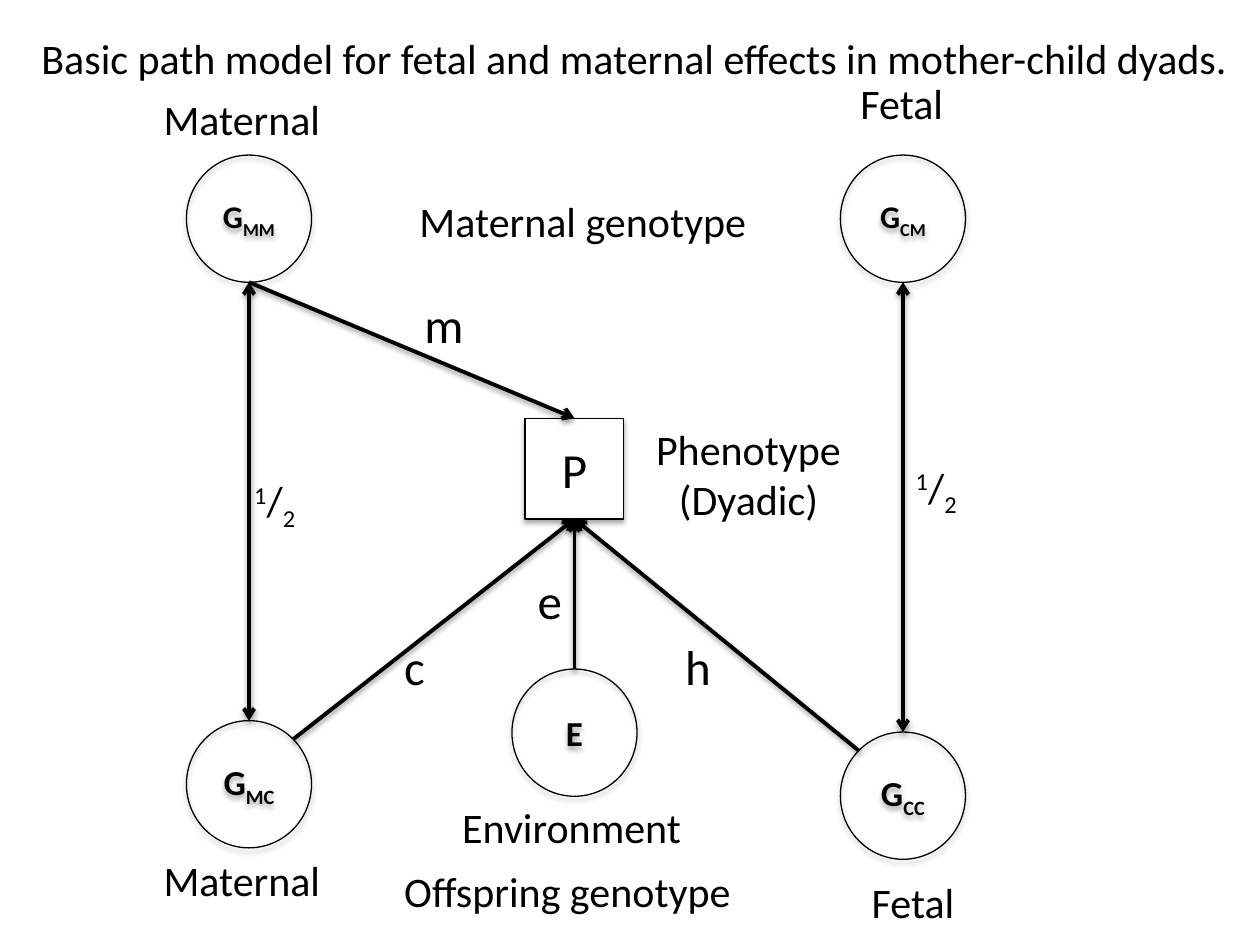
from lxml.etree import SubElement
from pptx import Presentation
from pptx.dml.color import RGBColor
from pptx.enum.shapes import MSO_CONNECTOR, MSO_SHAPE
from pptx.enum.text import MSO_ANCHOR, MSO_AUTO_SIZE, PP_ALIGN
from pptx.oxml.ns import qn
from pptx.util import Pt

BLACK = RGBColor(0, 0, 0)
WHITE = RGBColor(255, 255, 255)
SUB, SUP = -25000, 30000


def write(tf, *lines, size=24, bold=False, align=PP_ALIGN.LEFT):
    """Write one paragraph per line; a line is a list of (text, baseline) runs."""
    for i, line in enumerate(lines):
        p = tf.paragraphs[0] if i == 0 else tf.add_paragraph()
        p.alignment = align
        for text, baseline in line:
            r = p.add_run()
            r.text = text
            r.font.name = "Calibri"
            r.font.size = Pt(size)
            r.font.bold = bold
            r.font.color.rgb = BLACK
            if baseline:
                r._r.get_or_add_rPr().set("baseline", str(baseline))


prs = Presentation()
prs.slide_width, prs.slide_height = Pt(720), Pt(540)
slide = prs.slides.add_slide(prs.slide_layouts[6])
shapes = slide.shapes

# Column centres, and the top edges of the nodes
LEFT, MID, RIGHT = 142.3, 328.3, 516
MM_TOP, CM_TOP, MC_TOP, CC_TOP, E_TOP, P_TOP = 88.6, 88.6, 411.8, 418.3, 382.3, 239
NODE_W, NODE_H = 71.5, 72.7
P_W, P_H = 56.4, 57.6
P_BOTTOM = P_TOP + P_H
SIDE_X, SIDE_Y = 0.354 * NODE_W, 0.146 * NODE_H  # 45 degree point on a circle

# Nodes and connectors keep the theme's soft shadow
nodes = [
    (MSO_SHAPE.OVAL, LEFT, MM_TOP, "G", "MM", 18),
    (MSO_SHAPE.RECTANGLE, MID, P_TOP, "P", "", 28),
    (MSO_SHAPE.OVAL, RIGHT, CM_TOP, "G", "CM", 18),
    (MSO_SHAPE.OVAL, LEFT, MC_TOP, "G", "MC", 20),
    (MSO_SHAPE.OVAL, RIGHT, CC_TOP, "G", "CC", 20),
    (MSO_SHAPE.OVAL, MID, E_TOP, "E", "", 20),
]
for kind, cx, top, name, sub, size in nodes:
    is_circle = kind == MSO_SHAPE.OVAL
    w, h = (NODE_W, NODE_H) if is_circle else (P_W, P_H)
    sp = shapes.add_shape(kind, Pt(cx - w / 2), Pt(top), Pt(w), Pt(h))
    if is_circle:
        sp.fill.background()
    else:
        sp.fill.solid()
        sp.fill.fore_color.rgb = WHITE
    sp.line.color.rgb = BLACK
    sp.line.width = Pt(0.75)
    sp.text_frame.vertical_anchor = MSO_ANCHOR.MIDDLE
    runs = [(name, 0), (sub, SUB)] if sub else [(name, 0)]
    write(sp.text_frame, runs, size=size, bold=is_circle, align=PP_ALIGN.CENTER)

# Paths: start, end, arrowhead at both ends
paths = [
    (LEFT, MM_TOP + NODE_H, LEFT, MC_TOP, True),
    (RIGHT, CM_TOP + NODE_H, RIGHT, CC_TOP, True),
    (LEFT, MM_TOP + NODE_H, MID, P_TOP, False),
    (LEFT + SIDE_X, MC_TOP + SIDE_Y, MID, P_BOTTOM, False),
    (RIGHT - SIDE_X, CC_TOP + SIDE_Y, MID, P_BOTTOM, False),
    (MID, E_TOP, MID, P_BOTTOM, False),
]
for x1, y1, x2, y2, both in paths:
    line = shapes.add_connector(MSO_CONNECTOR.STRAIGHT, Pt(x1), Pt(y1), Pt(x2), Pt(y2))
    line.line.color.rgb = BLACK
    line.line.width = Pt(2.25)
    ln = line.line._get_or_add_ln()
    for end in ("a:headEnd", "a:tailEnd") if both else ("a:tailEnd",):
        SubElement(ln, qn(end)).set("type", "arrow")

# Labels: left, top, width, height, lines, size, wrap, alignment
HALF = [("1", SUP), ("/", 0), ("2", SUB)]
L, C = PP_ALIGN.LEFT, PP_ALIGN.CENTER
labels = [
    (138.2, 267.8, 44, 36, [HALF], 24, True, L),
    (516.2, 259.9, 44, 36, [HALF], 24, True, L),
    (235.4, 164.9, 26, 41, ["m"], 28, True, L),
    (223.9, 360, 52, 41, ["c"], 28, True, L),
    (384.5, 360, 69, 41, ["h"], 28, True, L),
    (300.2, 322.6, 52, 41, ["e"], 28, True, L),
    (232.6, 108, 204, 36, ["Maternal genotype"], 24, False, L),
    (86.4, 49.7, 105, 36, ["Maternal"], 24, False, L),
    (484.6, 41, 63, 36, ["Fetal"], 24, False, L),
    (367.2, 238.3, 121, 65.5, ["Phenotype", "(Dyadic)"], 24, False, C),
    (223.9, 491, 204, 36, ["Offspring genotype"], 24, False, L),
    (86.4, 484.6, 105, 36, ["Maternal"], 24, False, L),
    (491, 497.5, 63, 36, ["Fetal"], 24, False, L),
    (257, 454.3, 142, 36, ["Environment"], 24, False, L),
    (16.6, 15.1, 703.4, 36,
     ["Basic path model for fetal and maternal effects in mother-child dyads."], 24, True, L),
]
for x, y, w, h, lines, size, wrap, align in labels:
    tf = shapes.add_textbox(Pt(x), Pt(y), Pt(w), Pt(h)).text_frame
    tf.word_wrap = wrap
    tf.auto_size = MSO_AUTO_SIZE.SHAPE_TO_FIT_TEXT
    runs = [[(line, 0)] if isinstance(line, str) else line for line in lines]
    write(tf, *runs, size=size, align=align)

prs.save("out.pptx")
